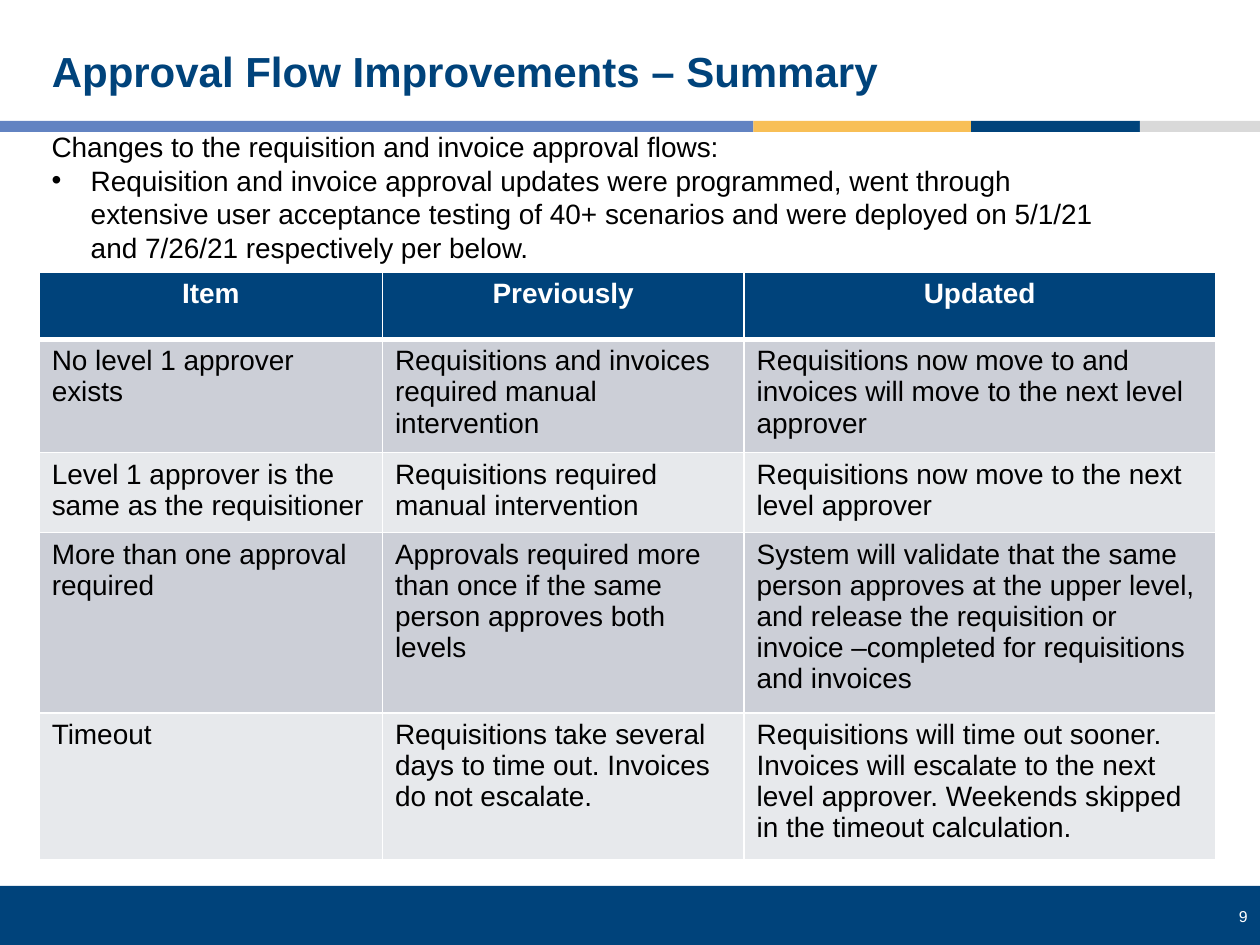
from dataclasses import dataclass

from lxml import etree
from pptx import Presentation
from pptx.dml.color import RGBColor
from pptx.enum import shapes, text
from pptx.oxml import ns
from pptx.util import Cm, Pt


@dataclass(frozen=True)
class Theme:
    font: str = "Arial"
    navy: str = "00437B"
    blue: str = "6283C2"
    gold: str = "F8BF56"
    silver: str = "D9D9D9"
    white: str = "FFFFFF"
    black: str = "000000"
    bands: tuple = ("CCCFD7", "E7E9EC")
    title_size: int = 24
    body_size: int = 16
    number_size: int = 9


theme = Theme()


def style(paragraph, size, color, bold=False):
    for run in paragraph.runs:
        run.font.name = theme.font
        run.font.size = Pt(size)
        run.font.bold = bold
        run.font.color.rgb = RGBColor.from_string(color)


def add_bar(left, top, width, height, color):
    bar = slide.shapes.add_shape(
        shapes.MSO_SHAPE.RECTANGLE, Cm(left), Cm(top), Cm(width), Cm(height))
    bar.shadow.inherit = False
    bar.fill.solid()
    bar.fill.fore_color.rgb = RGBColor.from_string(color)
    bar.line.fill.background()


presentation = Presentation()
presentation.slide_width = Cm(25.4)
presentation.slide_height = Cm(19.05)
slide = presentation.slides.add_slide(presentation.slide_layouts[5])

# Footer band and slide number
add_bar(0, 17.86, 25.4, 1.19, theme.navy)
number = slide.shapes.add_textbox(Cm(23.65), Cm(18.16), Cm(1.75), Cm(0.64))
number.text_frame.word_wrap = True
number.text_frame.text = "9"
paragraph = number.text_frame.paragraphs[0]
paragraph.alignment = text.PP_ALIGN.RIGHT
style(paragraph, theme.number_size, theme.white)

# Coloured rule under the title, each segment running to the next
edges = [0, 15.19, 19.58, 22.98, 25.4]
colors = [theme.blue, theme.gold, theme.navy, theme.silver]
for left, right, color in zip(edges, edges[1:], colors):
    add_bar(left, 2.44, right - left, 0.22, color)

# Title
title = slide.shapes.title
title.left, title.top, title.width, title.height = Cm(0.79), Cm(0.61), Cm(24.31), Cm(1.75)
title.text_frame.text = "Approval Flow Improvements – Summary"
title.text_frame.auto_size = text.MSO_AUTO_SIZE.NONE
title.text_frame.vertical_anchor = text.MSO_ANCHOR.MIDDLE
paragraph = title.text_frame.paragraphs[0]
paragraph.alignment = text.PP_ALIGN.LEFT
paragraph.line_spacing = 0.9
style(paragraph, theme.title_size, theme.navy, bold=True)

# Table
rows = [
    ("Item", "Previously", "Updated"),
    ("No level 1 approver exists",
     "Requisitions and invoices required manual intervention",
     "Requisitions now move to and invoices will move to the next level approver"),
    ("Level 1 approver is the same as the requisitioner",
     "Requisitions required manual intervention",
     "Requisitions now move to the next level approver"),
    ("More than one approval required",
     "Approvals required more than once if the same person approves both levels",
     "System will validate that the same person approves at the upper level, and release "
     "the requisition or invoice –completed for requisitions and invoices"),
    ("Timeout",
     "Requisitions take several days to time out. Invoices do not escalate.",
     "Requisitions will time out sooner.\vInvoices will escalate to the next level "
     "approver. Weekends skipped in the timeout calculation."),
]
column_widths = [6.92, 7.29, 9.5]
row_heights = [1.36, 2.13, 1.55, 3.53, 2.74]
table = slide.shapes.add_table(
    len(rows), len(column_widths), Cm(0.79), Cm(5.48),
    Cm(sum(column_widths)), Cm(sum(row_heights))).table
for column, width in zip(table.columns, column_widths):
    column.width = Cm(width)
for row, height in zip(table.rows, row_heights):
    row.height = Cm(height)

for row_index, row in enumerate(rows):
    header = row_index == 0
    for column_index, wording in enumerate(row):
        cell = table.cell(row_index, column_index)
        cell.text_frame.text = wording
        paragraph = cell.text_frame.paragraphs[0]
        if header:
            paragraph.alignment = text.PP_ALIGN.CENTER
        style(paragraph, theme.body_size, theme.white if header else theme.black, header)

        # Borders come before the fill in the cell properties
        properties = cell._tc.get_or_add_tcPr()
        for side in ("lnL", "lnR", "lnT", "lnB"):
            thick = (header and side == "lnB") or (row_index == 1 and side == "lnT")
            line = etree.SubElement(properties, ns.qn(f"a:{side}"), w=str(Pt(3 if thick else 1)))
            solid = etree.SubElement(line, ns.qn("a:solidFill"))
            etree.SubElement(solid, ns.qn("a:srgbClr"), val=theme.white)
        cell.fill.solid()
        cell.fill.fore_color.rgb = RGBColor.from_string(
            theme.navy if header else theme.bands[(row_index - 1) % 2])

# Introduction
intro = slide.shapes.add_textbox(Cm(0.79), Cm(2.49), Cm(22.23), Cm(3))
intro.text_frame.word_wrap = True
intro.text_frame.text = (
    "Changes to the requisition and invoice approval flows:\n"
    "Requisition and invoice approval updates were programmed, went through extensive "
    "user acceptance testing of 40+ scenarios and were deployed on 5/1/21 and 7/26/21 "
    "respectively per below.")
bullet = intro.text_frame.paragraphs[1]._p.get_or_add_pPr()
bullet.set("marL", str(Cm(0.79)))
bullet.set("indent", str(Cm(-0.79)))
etree.SubElement(bullet, ns.qn("a:buFont"), typeface=theme.font)
etree.SubElement(bullet, ns.qn("a:buChar"), char="•")
for paragraph in intro.text_frame.paragraphs:
    style(paragraph, theme.body_size, theme.black)

presentation.save("out.pptx")
